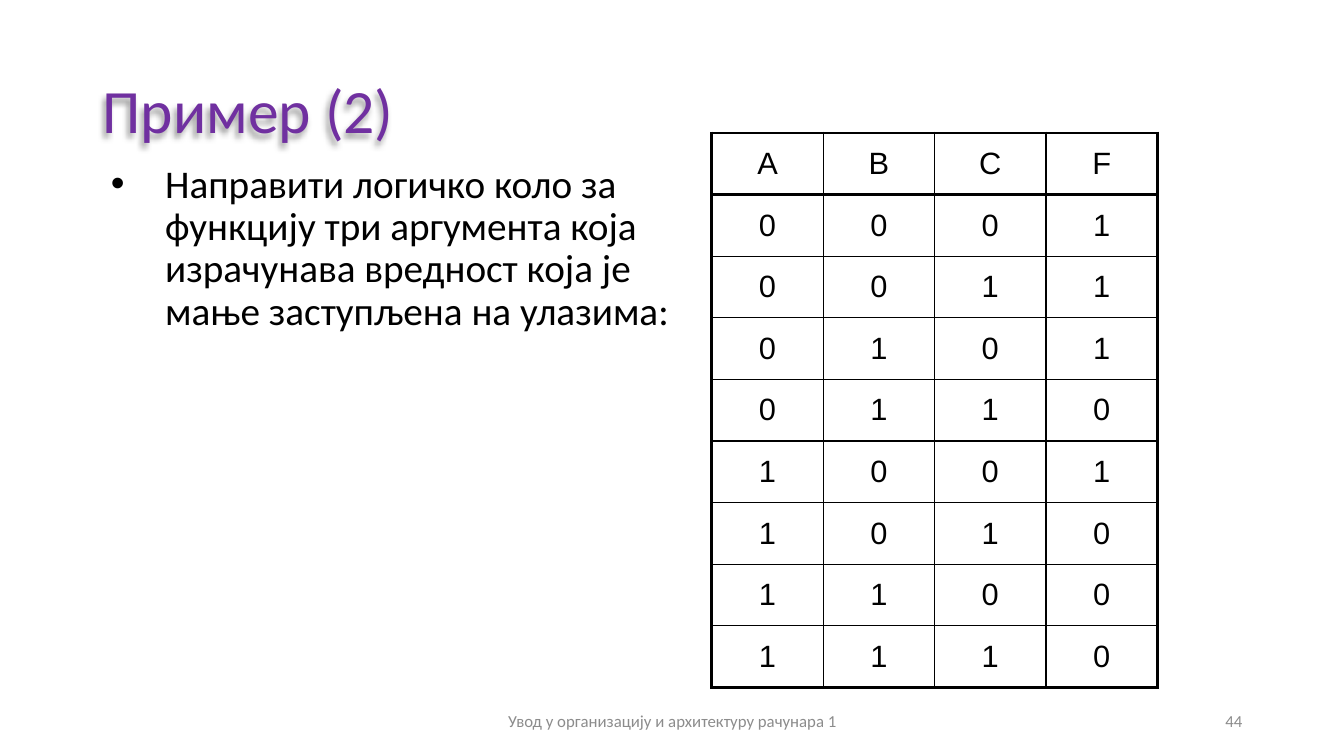
from dataclasses import dataclass
from itertools import product

from lxml import etree
from pptx import Presentation
from pptx import util as u
from pptx.dml.color import RGBColor
from pptx.enum import text
from pptx.oxml import ns


@dataclass(frozen=True)
class Theme:
    font: str = "Calibri"
    table_font: str = "Arial"
    title_color: str = "7030A0"
    ink: str = "000000"
    muted: str = "8C8C8C"
    title_size: float = 44
    body_size: float = 28
    table_size: float = 22
    footer_size: float = 12
    thin: float = 1
    thick: float = 2.25


def add_xml(parent, tag, **attributes):
    return etree.SubElement(parent, ns.qn(tag), {key: str(value) for key, value in attributes.items()})


class SlideBuilder:
    def __init__(self, slide, theme):
        self.slide = slide
        self.theme = theme

    def styled_run(self, paragraph, content, size, color, font):
        run = paragraph.add_run()
        run.text = content
        run.font.size = u.Pt(size)
        run.font.name = font
        run.font.color.rgb = RGBColor.from_string(color)

    def text_box(self, box, content, size, color, align=text.PP_ALIGN.LEFT,
                 anchor=text.MSO_ANCHOR.MIDDLE):
        shape = self.slide.shapes.add_textbox(*map(u.Inches, box))
        frame = shape.text_frame
        frame.word_wrap = True
        frame.vertical_anchor = anchor
        paragraph = frame.paragraphs[0]
        paragraph.alignment = align
        self.styled_run(paragraph, content, size, color, self.theme.font)
        return shape

    def title(self, box, content):
        shape = self.text_box(box, content, self.theme.title_size, self.theme.title_color)
        shape.text_frame.paragraphs[0].line_spacing = 0.9
        effects = add_xml(shape._element.spPr, "a:effectLst")
        shadow = add_xml(effects, "a:outerShdw", blurRad=u.Pt(4), dist=u.Pt(4), dir=8100000,
                         algn="tr", rotWithShape=0)
        color = add_xml(shadow, "a:srgbClr", val=self.theme.ink)
        add_xml(color, "a:alpha", val=40000)

    def bullet(self, box, content):
        shape = self.text_box(box, content, self.theme.body_size, self.theme.ink,
                              anchor=text.MSO_ANCHOR.TOP)
        paragraph = shape.text_frame.paragraphs[0]
        paragraph.line_spacing = 0.9
        paragraph.space_before = u.Pt(10)
        properties = paragraph._p.get_or_add_pPr()
        indent = u.Inches(0.54)
        properties.set("marL", str(indent))
        properties.set("indent", str(-indent))
        add_xml(properties, "a:buFont", typeface="Arial")
        add_xml(properties, "a:buChar", char="•")

    def footer(self, box, content, align):
        self.text_box(box, content, self.theme.footer_size, self.theme.muted, align)

    def border(self, cell, side, width):
        line = add_xml(cell._tc.get_or_add_tcPr(), f"a:ln{side}", w=u.Pt(width))
        fill = add_xml(line, "a:solidFill")
        add_xml(fill, "a:srgbClr", val=self.theme.ink)

    def truth_table(self, box, rows):
        row_count, column_count = len(rows), len(rows[0])
        left, top, width, height = map(u.Inches, box)
        table = self.slide.shapes.add_table(row_count, column_count, left, top, width, height).table
        table.first_row = False
        table.horz_banding = False
        for row, values in enumerate(rows):
            for column, value in enumerate(values):
                cell = table.cell(row, column)
                cell.vertical_anchor = text.MSO_ANCHOR.MIDDLE
                heavy_sides = {
                    "L": column == 0,
                    "R": column == column_count - 1,
                    "T": row in (0, 1),
                    "B": row in (0, row_count - 1),
                }
                for side, heavy in heavy_sides.items():
                    self.border(cell, side, self.theme.thick if heavy else self.theme.thin)
                cell.fill.background()
                paragraph = cell.text_frame.paragraphs[0]
                paragraph.alignment = text.PP_ALIGN.CENTER
                paragraph.space_before = u.Pt(0.2 * self.theme.table_size)
                self.styled_run(paragraph, str(value), self.theme.table_size, self.theme.ink,
                                self.theme.table_font)


def main():
    presentation = Presentation()
    presentation.slide_width = u.Inches(13.33)
    presentation.slide_height = u.Inches(7.5)
    slide = presentation.slides.add_slide(presentation.slide_layouts[6])
    builder = SlideBuilder(slide, Theme())

    builder.bullet((1, 1.58, 5.89, 5.5),
                   "Направити логичко коло за функцију три аргумента која "
                   "израчунава вредност која је мање заступљена на улазима:")
    minority_rows = [(*inputs, int(sum(inputs) < 2)) for inputs in product((0, 1), repeat=3)]
    builder.truth_table((7.06, 1.32, 4.42, 5.5), [tuple("ABCF"), *minority_rows])
    builder.footer((4.42, 6.95, 4.5, 0.4), "Увод у организацију и архитектуру рачунара 1",
                   text.PP_ALIGN.CENTER)
    builder.footer((9.42, 6.95, 3, 0.4), "44", text.PP_ALIGN.RIGHT)
    builder.title((0.92, 0.4, 11.5, 1.45), "Пример (2)")

    presentation.save("out.pptx")


if __name__ == "__main__":
    main()
